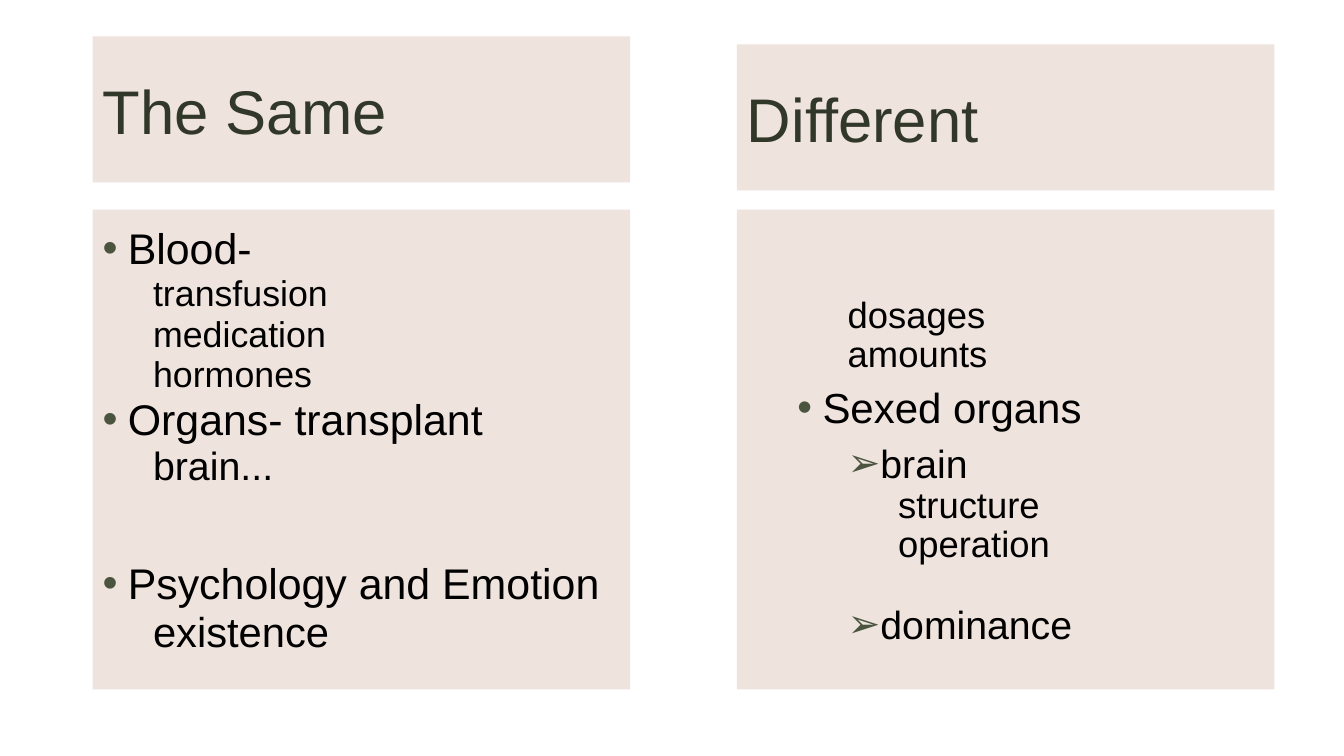
from lxml import etree
from pptx import Presentation
from pptx.dml.color import RGBColor
from pptx.enum.shapes import MSO_SHAPE
from pptx.enum.text import MSO_ANCHOR, PP_ALIGN
from pptx.oxml.ns import qn
from pptx.util import Inches, Pt

RECTANGLE = MSO_SHAPE.RECTANGLE
TOP, MIDDLE = MSO_ANCHOR.TOP, MSO_ANCHOR.MIDDLE
LEFT = PP_ALIGN.LEFT

PANEL = RGBColor(0xEB, 0xDC, 0xD5)
HEADING = RGBColor(0x31, 0x38, 0x29)
BULLET = RGBColor(0x4A, 0x54, 0x3E)
BLACK = RGBColor(0, 0, 0)

PANEL_WIDTH = 5.33
DOT, ARROW = "•", "➢"

# Each line: text, size, left margin, bullet, space before
SAME_LINES = [
    ("Blood-", 30.6, 0.25, DOT, 0),
    ("transfusion", 25.5, 0.5, None, 1),
    ("medication", 25.5, 0.5, None, 1),
    ("hormones", 25.5, 0.5, None, 1),
    ("Organs- transplant", 30.6, 0.25, DOT, 7.5),
    ("brain...", 28.1, 0.5, None, 3),
    ("Psychology and Emotion", 30.6, 0.25, DOT, 58),
    ("existence", 29.8, 0.5, None, 6),
]
DIFFERENT_LINES = [
    ("dosages", 26, 1, None, 0),
    ("amounts", 26, 1, None, 0),
    ("Sexed organs", 30, 0.75, DOT, 13),
    ("brain", 28, 1.25, ARROW, 11),
    ("structure", 26, 1.5, None, 0),
    ("operation", 26, 1.5, None, 0),
    ("dominance", 28, 1.25, ARROW, 31),
]


class ComparisonSlide:
    font_name = "Arial"
    line_height = Pt(28)
    hanging = Inches(0.25)

    def __init__(self, presentation):
        self.slide = presentation.slides.add_slide(presentation.slide_layouts[6])

    def panel(self, left, top, height, anchor):
        """Add a translucent panel and return its text frame."""
        shape = self.slide.shapes.add_shape(
            RECTANGLE, Inches(left), Inches(top), Inches(PANEL_WIDTH), Inches(height))
        shape.shadow.inherit = False
        shape.line.fill.background()
        shape.fill.solid()
        shape.fill.fore_color.rgb = PANEL
        color = shape._element.spPr.find(qn("a:solidFill")).find(qn("a:srgbClr"))
        etree.SubElement(color, qn("a:alpha"), val="80000")
        text_frame = shape.text_frame
        text_frame.word_wrap = True
        text_frame.vertical_anchor = anchor
        return text_frame

    def set_text(self, paragraph, text, size, color):
        paragraph.text = text
        paragraph.alignment = LEFT
        font = paragraph.runs[0].font
        font.name = self.font_name
        font.size = Pt(size)
        font.color.rgb = color

    def heading(self, left, top, text):
        text_frame = self.panel(left, top, 1.45, MIDDLE)
        self.set_text(text_frame.paragraphs[0], text, 44, HEADING)

    def outline(self, left, top_inset, lines):
        text_frame = self.panel(left, 2.08, 4.76, TOP)
        text_frame.margin_top = Inches(top_inset)
        for index, (text, size, margin, bullet, before) in enumerate(lines):
            paragraph = text_frame.add_paragraph() if index else text_frame.paragraphs[0]
            self.indent(paragraph, margin, bullet)
            paragraph.line_spacing = self.line_height
            if before:
                paragraph.space_before = Pt(before)
            self.set_text(paragraph, text, size, BLACK)

    def indent(self, paragraph, margin, bullet):
        properties = paragraph._p.get_or_add_pPr()
        properties.set("marL", str(Inches(margin)))
        properties.set("indent", str(-self.hanging if bullet else 0))
        if bullet:
            color = etree.SubElement(properties, qn("a:buClr"))
            etree.SubElement(color, qn("a:srgbClr"), val=str(BULLET))
            etree.SubElement(properties, qn("a:buFont"), typeface=self.font_name)
            etree.SubElement(properties, qn("a:buChar"), char=bullet)
        else:
            etree.SubElement(properties, qn("a:buNone"))


def main():
    presentation = Presentation()
    presentation.slide_width = Inches(13.33)
    presentation.slide_height = Inches(7.5)
    comparison = ComparisonSlide(presentation)

    # Left column
    comparison.heading(0.92, 0.36, "The Same")
    comparison.outline(0.92, 0.24, SAME_LINES)

    # Right column
    comparison.heading(7.31, 0.44, "Different")
    comparison.outline(7.31, 0.86, DIFFERENT_LINES)

    presentation.save("out.pptx")


if __name__ == "__main__":
    main()
